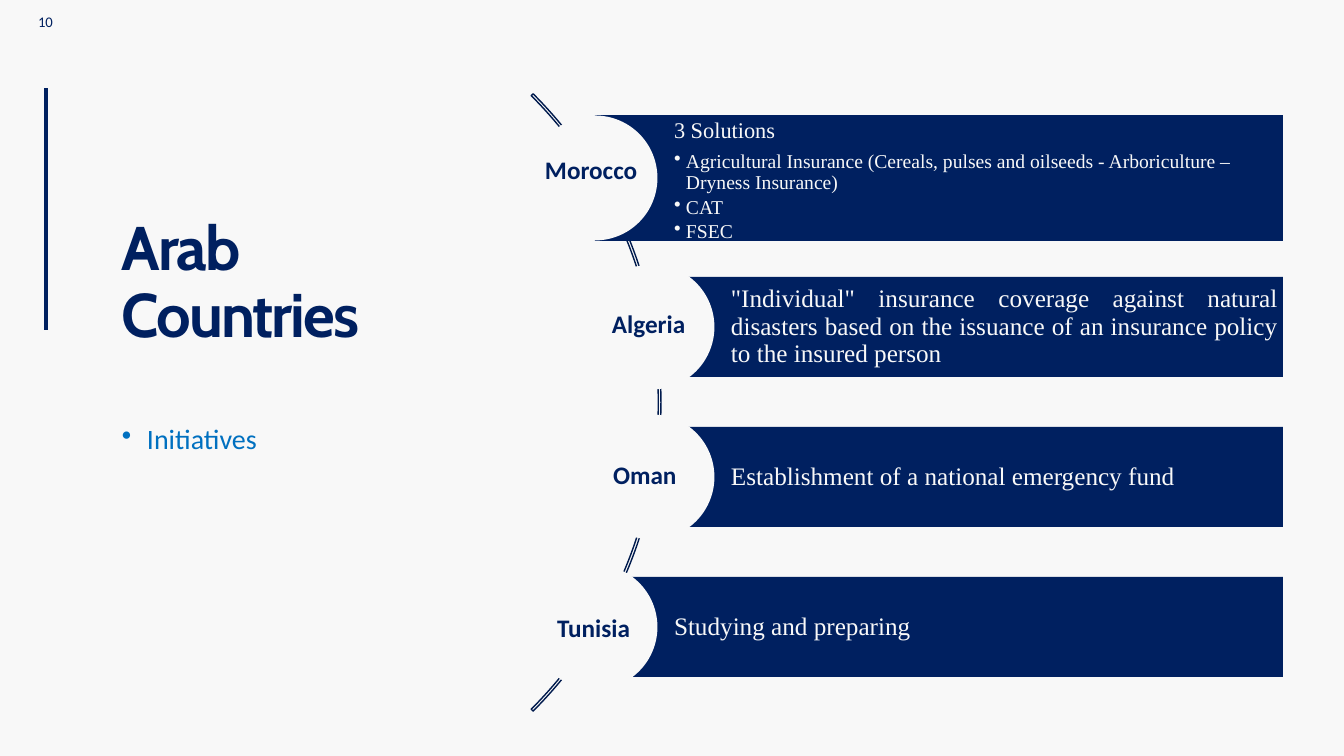
from lxml import etree
from pptx import Presentation
from pptx.dml.color import RGBColor
from pptx.enum.shapes import MSO_CONNECTOR, MSO_SHAPE
from pptx.enum.text import MSO_ANCHOR, PP_ALIGN
from pptx.oxml.ns import qn
from pptx.util import Emu, Pt

RECTANGLE, OVAL, ARC = MSO_SHAPE.RECTANGLE, MSO_SHAPE.OVAL, MSO_SHAPE.BLOCK_ARC
STRAIGHT = MSO_CONNECTOR.STRAIGHT
TOP, MIDDLE = MSO_ANCHOR.TOP, MSO_ANCHOR.MIDDLE
LEFT, CENTER, JUSTIFY = PP_ALIGN.LEFT, PP_ALIGN.CENTER, PP_ALIGN.JUSTIFY

COLORS = {"paper": "F8F8F8", "navy": "002060", "arc": "001A4D", "blue": "0070C0"}
SERIF, SANS, DISPLAY = "Times New Roman", "Calibri", "Cabin"
EMU_PER_PX = 914400 / 100.8
CIRCLE = 125
CARDS_RIGHT = 1283

COUNTRIES = [
    ("Morocco", (595, 115, 126), (535, 149, 123), TOP, [
        ("3 Solutions", 16, LEFT, False),
        ("Agricultural Insurance (Cereals, pulses and oilseeds - Arboriculture – Dryness Insurance)",
         14, LEFT, True),
        ("CAT", 14, LEFT, True),
        ("FSEC", 14, LEFT, True),
    ]),
    ("Algeria", (652, 277, 100), (602, 303, 111), MIDDLE, [
        ('"Individual" insurance coverage against natural disasters based on '
         "the issuance of an insurance policy to the insured person", 18, JUSTIFY, False),
    ]),
    ("Oman", (652, 427, 100), (603, 454, 111), MIDDLE, [
        ("Establishment of a national emergency fund", 18, LEFT, False),
    ]),
    ("Tunisia", (595, 577, 100), (547, 607, 111), MIDDLE, [
        ("Studying and preparing", 18, LEFT, False),
    ]),
]


def px(length):
    return Emu(round(length * EMU_PER_PX))


def color(name):
    return RGBColor.from_string(COLORS[name])


def add_filled(slide, kind, box, fill):
    shape = slide.shapes.add_shape(kind, *map(px, box))
    shape.shadow.inherit = False
    shape.fill.solid()
    shape.fill.fore_color.rgb = color(fill)
    shape.line.fill.background()
    return shape


def prepare_frame(shape, anchor, margins=(10, 5, 10, 5)):
    frame = shape.text_frame
    frame.word_wrap = True
    frame.vertical_anchor = anchor
    (frame.margin_left, frame.margin_top,
     frame.margin_right, frame.margin_bottom) = map(px, margins)
    return frame


def add_run(paragraph, text, font_name, size, ink, bold=False):
    run = paragraph.add_run()
    run.text = text
    run.font.name = font_name
    run.font.size = Pt(size)
    run.font.bold = bold
    run.font.color.rgb = color(ink)
    return run


def add_bullet(paragraph, indent):
    properties = paragraph._p.get_or_add_pPr()
    properties.set("marL", str(px(indent)))
    properties.set("indent", str(-px(indent)))
    etree.SubElement(properties, qn("a:buChar")).set("char", "•")


def add_text(slide, box, text, font_name, size, ink, bold=False, anchor=TOP):
    textbox = slide.shapes.add_textbox(*map(px, box))
    paragraph = prepare_frame(textbox, anchor).paragraphs[0]
    return paragraph, add_run(paragraph, text, font_name, size, ink, bold)


def add_heading(slide, left, top, width):
    x = left - 66
    rule = slide.shapes.add_connector(STRAIGHT, px(x), px(top + 172), px(x), px(top - 70))
    rule.line.color.rgb = color("navy")
    rule.line.width = Pt(3)
    etree.SubElement(rule._element.spPr, qn("a:effectLst"))

    number, _ = add_text(slide, (17, 8, 57, 27), "10", SANS, 10.5, "navy")
    number.alignment = CENTER

    title, run = add_text(slide, (left, top, width, 252), "Arab Countries",
                          DISPLAY, 44, "navy", True, MIDDLE)
    title.line_spacing = 0.9
    run.font._element.set("spc", "-150")

    subtitle, _ = add_text(slide, (left, top + 262, width, 232), "Initiatives",
                           SANS, 20, "blue")
    add_bullet(subtitle, 25)
    subtitle.line_spacing = 0.9


def add_arc(slide, left, top, size):
    arc = slide.shapes.add_shape(ARC, *map(px, (left, top, size, size)))
    arc.shadow.inherit = False
    for index, value in enumerate((189, 27, 0.003)):
        arc.adjustments[index] = value
    arc.fill.background()
    arc.line.color.rgb = color("arc")
    arc.line.width = Pt(1)


def add_country(slide, left, top, height, anchor, lines):
    card = add_filled(slide, RECTANGLE, (left, top, CARDS_RIGHT - left, height), "navy")
    frame = prepare_frame(card, anchor, (79, 4, 5, 4))
    for index, (text, size, alignment, bulleted) in enumerate(lines):
        paragraph = frame.add_paragraph() if index else frame.paragraphs[0]
        paragraph.alignment = alignment
        if bulleted:
            add_bullet(paragraph, 12)
        paragraph.line_spacing = 0.9
        paragraph.space_after = Pt(2.4 if bulleted else 6)
        add_run(paragraph, text, SERIF, size, "paper")
    add_filled(slide, OVAL, (left - CIRCLE / 2, top + (height - CIRCLE) / 2, CIRCLE, CIRCLE),
               "paper")


def add_countries(slide):
    add_arc(slide, -212, -34, 873)
    for _, (left, top, height), _, anchor, lines in COUNTRIES:
        add_country(slide, left, top, height, anchor, lines)
    for name, _, (left, top, width), _, _ in COUNTRIES:
        add_text(slide, (left, top, width, 40), name, SANS, 18, "navy", True)


def main():
    presentation = Presentation()
    presentation.slide_width, presentation.slide_height = px(1344), px(756)
    slide = presentation.slides.add_slide(presentation.slide_layouts[6])
    slide.background.fill.solid()
    slide.background.fill.fore_color.rgb = color("paper")
    add_heading(slide, 112, 158, 383)
    add_countries(slide)
    presentation.save("out.pptx")


if __name__ == "__main__":
    main()
